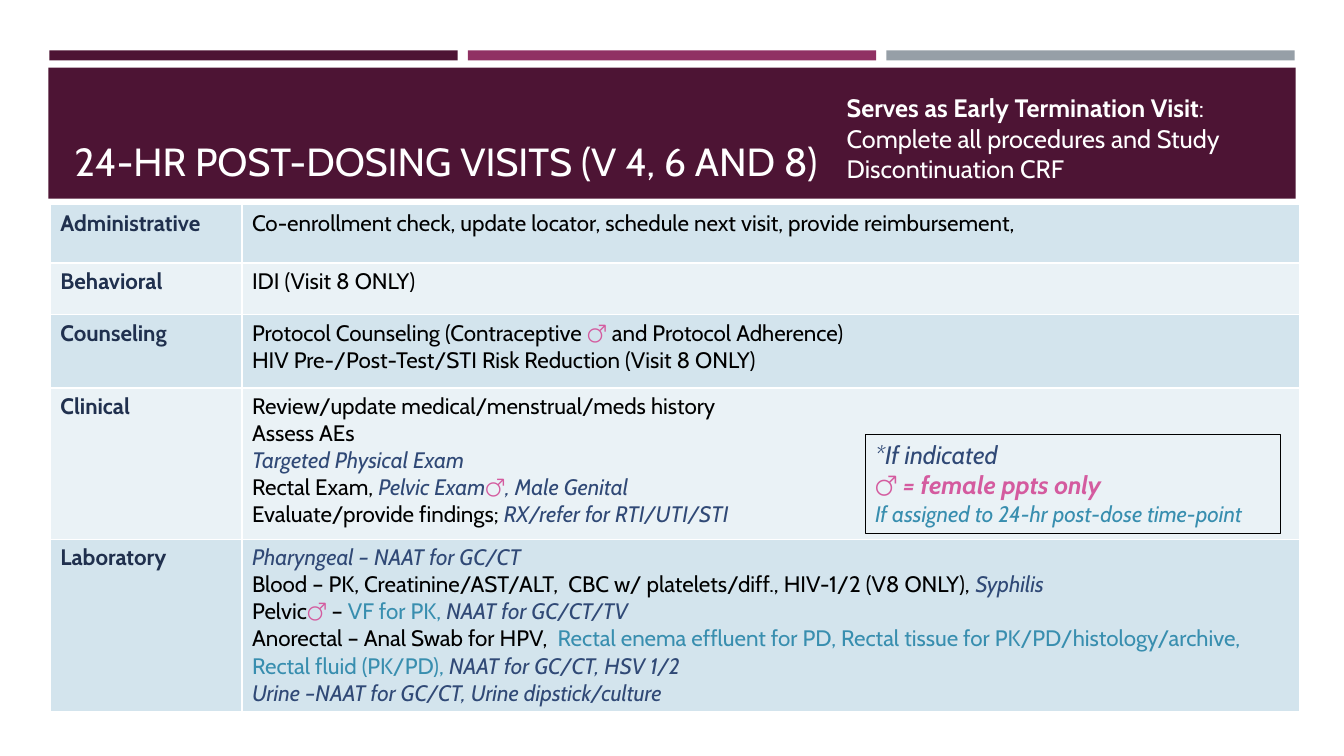
import pptx
import pptx.dml.color
import pptx.enum.shapes
import pptx.enum.text
import pptx.oxml
import pptx.oxml.ns
import pptx.util
from pptx.util import Inches

THEME = {
    "font": "Cabin",
    "title": 28,
    "note": 18,
    "body": 16,
    "plum": "4D1434",
    "magenta": "903163",
    "gray": "969FA7",
    "bands": ("D3E4ED", "EAF2F6"),
    "border": "FFFFFF",
    "outline": "000000",
}

STYLES = {
    "label": ("20304E", True, False),
    "plain": ("000000", False, False),
    "indicated": ("304976", False, True),
    "symbol": ("D45B9F", True, False),
    "female": ("D45B9F", True, True),
    "assigned": ("388EAF", False, False),
    "assigned_key": ("388EAF", False, True),
    "header": ("FFFFFF", False, False),
    "header_bold": ("FFFFFF", True, False),
}

TITLE = [[("24-HR POST-DOSING VISITS (V 4, 6 AND 8)", "header")]]
TERMINATION = [[
    ("Serves as Early Termination Visit", "header_bold"),
    (": Complete all procedures and Study Discontinuation CRF", "header"),
]]
KEY = [
    [("*If indicated", "indicated")],
    [("♂ ", "symbol"), ("= female ppts only", "female")],
    [("If assigned to 24-hr post-dose time-point", "assigned_key")],
]
KEY_SIZES = (THEME["note"], THEME["note"], THEME["body"])

PROCEDURES = [
    ("Administrative", 0.58, [
        [("Co-enrollment check, update locator, schedule next visit, provide reimbursement,", "plain")],
    ]),
    ("Behavioral", 0.51, [
        [("IDI (Visit 8 ONLY)", "plain")],
    ]),
    ("Counseling", 0.73, [
        [("Protocol Counseling (Contraceptive ", "plain"), ("♂", "symbol"),
         (" and Protocol Adherence)", "plain")],
        [("HIV Pre-/Post-Test/STI Risk Reduction (Visit 8 ONLY)", "plain")],
    ]),
    ("Clinical", 1.5, [
        [("Review/update medical/menstrual/meds history", "plain")],
        [("Assess AEs", "plain")],
        [("Targeted Physical Exam", "indicated")],
        [("Rectal Exam, ", "plain"), ("Pelvic Exam", "indicated"), ("♂", "symbol"),
         (", Male Genital", "indicated")],
        [("Evaluate/provide findings; ", "plain"), ("RX/refer for RTI/UTI/STI", "indicated")],
    ]),
    ("Laboratory", 1.71, [
        [("Pharyngeal – NAAT for GC/CT", "indicated")],
        [("Blood – PK, Creatinine/AST/ALT,  CBC w/ platelets/diff., HIV-1/2 (V8 ONLY), ", "plain"),
         ("Syphilis", "indicated")],
        [("Pelvic", "plain"), ("♂", "symbol"), (" – ", "plain"), ("VF for PK, ", "assigned"),
         ("NAAT for GC/CT/TV", "indicated")],
        [("Anorectal – Anal Swab for HPV,  ", "plain"),
         ("Rectal enema effluent for PD, Rectal tissue for PK/PD/histology/archive, "
          "Rectal fluid (PK/PD), ", "assigned"),
         ("NAAT for GC/CT, HSV 1/2", "indicated")],
        [("Urine –NAAT for GC/CT, Urine dipstick/culture", "indicated")],
    ]),
]
COLUMN_WIDTHS = (1.9, 10.49)


def color(code):
    return pptx.dml.color.RGBColor.from_string(code)


def write(frame, lines, sizes):
    frame.word_wrap = True
    for index, (line, size) in enumerate(zip(lines, sizes)):
        paragraph = frame.paragraphs[0] if index == 0 else frame.add_paragraph()
        paragraph.alignment = pptx.enum.text.PP_ALIGN.LEFT
        paragraph.font.name = THEME["font"]
        paragraph.font.size = pptx.util.Pt(size)
        for words, style in line:
            run = paragraph.add_run()
            run.text = words
            code, run.font.bold, run.font.italic = STYLES[style]
            run.font.color.rgb = color(code)


def add_box(slide, place, fill=None, outline=None):
    box = slide.shapes.add_shape(
        pptx.enum.shapes.MSO_SHAPE.RECTANGLE, *map(Inches, place))
    box.shadow.inherit = False
    if fill:
        box.fill.solid()
        box.fill.fore_color.rgb = color(fill)
    else:
        box.fill.background()
    if outline:
        box.line.color.rgb = color(outline)
        box.line.width = pptx.util.Pt(0.75)
    else:
        box.line.fill.background()
    return box


def add_text(slide, place, lines, size, anchor):
    frame = slide.shapes.add_textbox(*map(Inches, place)).text_frame
    frame.vertical_anchor = anchor
    write(frame, lines, [size] * len(lines))


def style_cell(cell, fill):
    cell.fill.solid()
    cell.fill.fore_color.rgb = color(fill)
    properties = cell._tc.get_or_add_tcPr()
    for index, side in enumerate(("lnL", "lnR", "lnT", "lnB")):
        properties.insert(index, pptx.oxml.parse_xml(
            f'<a:{side} {pptx.oxml.ns.nsdecls("a")} w="12700"><a:solidFill>'
            f'<a:srgbClr val="{THEME["border"]}"/></a:solidFill></a:{side}>'))


def add_procedures(slide):
    height = sum(row_height for _, row_height, _ in PROCEDURES)
    table = slide.shapes.add_table(
        len(PROCEDURES), len(COLUMN_WIDTHS), Inches(0.5), Inches(2.03),
        Inches(sum(COLUMN_WIDTHS)), Inches(height)).table
    table.first_row = False
    table.horz_banding = False
    for column, width in zip(table.columns, COLUMN_WIDTHS):
        column.width = Inches(width)
    for index, (category, row_height, steps) in enumerate(PROCEDURES):
        table.rows[index].height = Inches(row_height)
        for cell, lines in zip(table.rows[index].cells, ([[(category, "label")]], steps)):
            style_cell(cell, THEME["bands"][index % 2])
            write(cell.text_frame, lines, [THEME["body"]] * len(lines))


def main():
    deck = pptx.Presentation()
    deck.slide_width, deck.slide_height = Inches(13.33), Inches(7.5)
    slide = deck.slides.add_slide(deck.slide_layouts[6])
    anchor = pptx.enum.text.MSO_ANCHOR

    for index, name in enumerate(("plum", "magenta", "gray")):
        add_box(slide, (0.49 + index * 4.15, 0.5, 4.05, 0.1), THEME[name])
    add_box(slide, (0.48, 0.67, 12.37, 1.3), THEME["plum"])
    add_text(slide, (0.64, 0.77, 12.06, 1.11), TITLE, THEME["title"], anchor.BOTTOM)
    add_procedures(slide)

    key = add_box(slide, (8.58, 4.31, 4.12, 0.98), outline=THEME["outline"])
    key.text_frame.vertical_anchor = anchor.TOP
    write(key.text_frame, KEY, KEY_SIZES)
    add_text(slide, (8.3, 0.87, 4.14, 1.01), TERMINATION, THEME["note"], anchor.TOP)

    deck.save("out.pptx")


if __name__ == "__main__":
    main()
